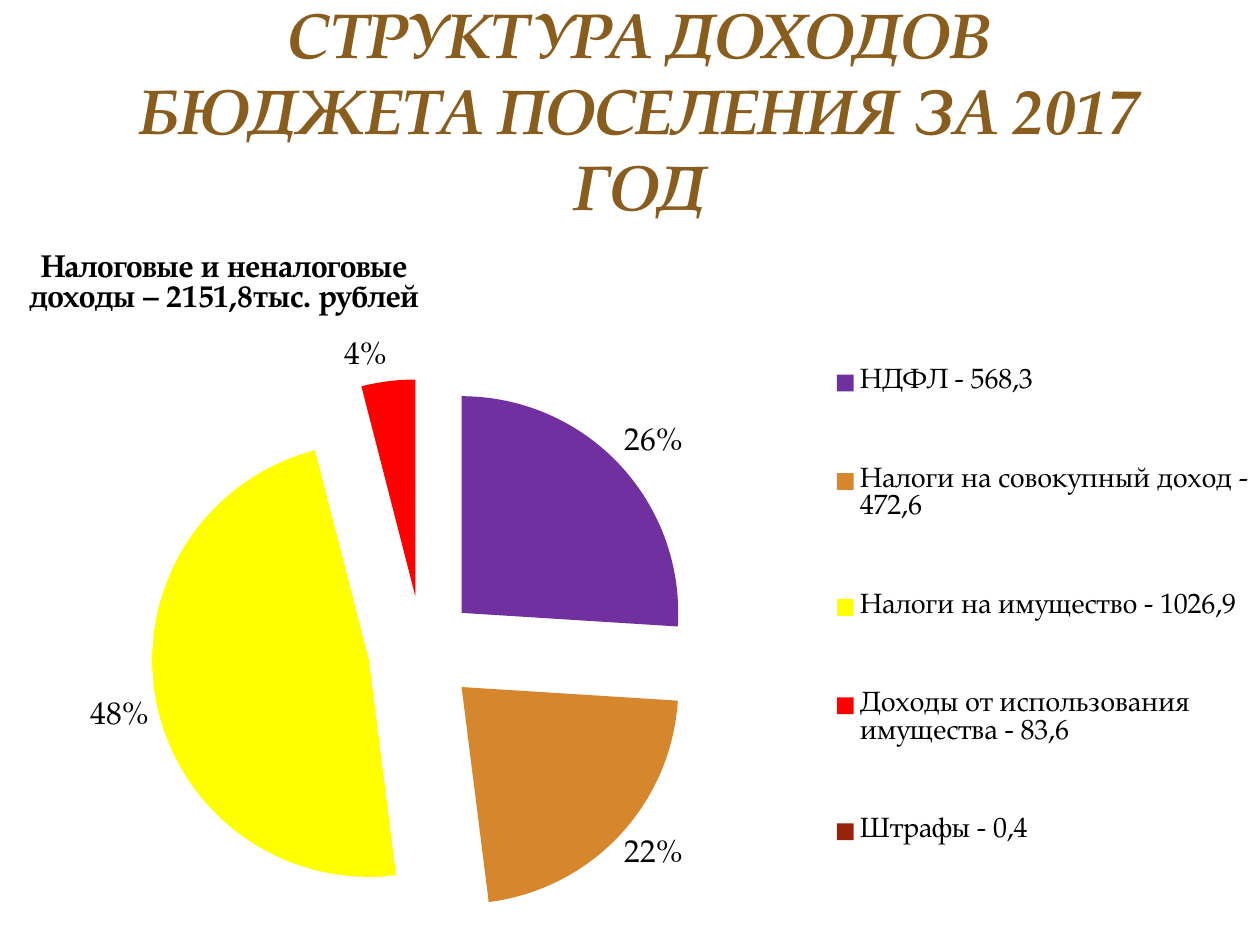
from pptx import Presentation
from pptx.chart.data import CategoryChartData
from pptx.dml.color import RGBColor
from pptx.enum.chart import XL_CHART_TYPE as ChartType, XL_LABEL_POSITION as LabelPosition
from pptx.enum.chart import XL_LEGEND_POSITION as LegendPosition
from pptx.enum.text import MSO_ANCHOR as Anchor, PP_ALIGN as Align
from pptx.oxml import parse_xml
from pptx.oxml.ns import nsdecls, qn
from pptx.util import Pt

HEADING = "СТРУКТУРА ДОХОДОВ БЮДЖЕТА ПОСЕЛЕНИЯ ЗА 2017 ГОД"
CHART_TITLE = ["Налоговые и неналоговые", "доходы – 2151,8тыс. рублей"]
INCOME = [
    ("НДФЛ - 568,3", 26, "7030A0"),
    ("Налоги на совокупный доход - 472,6", 22, "D6862D"),
    ("Налоги на имущество - 1026,9", 48, "FFFF00"),
    ("Доходы от использования имущества - 83,6", 4, "FF0000"),
    ("Штрафы - 0,4", 0, "972109"),
]
EXPLOSION = 25

FONT = "TeX Gyre Pagella"
THEME = {
    "heading": {"name": FONT, "size": Pt(36), "bold": True, "italic": True, "color": "895D1D"},
    "chart": {"name": FONT, "size": Pt(18), "color": "000000"},
    "title": {"name": FONT, "size": Pt(18), "bold": True, "color": "000000"},
    "legend": {"name": FONT, "size": Pt(16), "color": "000000"},
}
HEADING_BOX = (60, 21, 610, 83)
CHART_BOX = (0, 134, 720, 406)
TITLE_LAYOUT = {"x": 0.02, "y": 0.02}
PLOT_LAYOUT = {"x": 0.12, "y": 0.2, "w": 0.43, "h": 0.77}
LEGEND_LAYOUT = {"x": 0.66, "y": 0.09, "w": 0.34, "h": 0.87}


def style_font(font, style):
    for name, value in style.items():
        if name == "color":
            font.color.rgb = RGBColor.from_string(value)
        else:
            setattr(font, name, value)


def place(element, layout, index, inner=False):
    for old in element.findall(qn("c:layout")):
        element.remove(old)
    target = '<c:layoutTarget val="inner"/>' if inner else ""
    modes = "".join(f'<c:{key}Mode val="edge"/>' for key in "xy")
    values = "".join(f'<c:{key} val="{value}"/>' for key, value in layout.items())
    element.insert(index, parse_xml(
        f'<c:layout {nsdecls("c")}><c:manualLayout>{target}{modes}{values}'
        "</c:manualLayout></c:layout>"))


def add_heading(slide):
    frame = slide.shapes.add_textbox(*map(Pt, HEADING_BOX)).text_frame
    frame.word_wrap = True
    frame.vertical_anchor = Anchor.MIDDLE
    paragraph = frame.paragraphs[0]
    paragraph.alignment = Align.CENTER
    run = paragraph.add_run()
    run.text = HEADING
    style_font(run.font, THEME["heading"])


def add_title(chart):
    chart.has_title = True
    title = chart.chart_title
    title.include_in_layout = False
    frame = title.text_frame
    for index, line in enumerate(CHART_TITLE):
        paragraph = frame.add_paragraph() if index else frame.paragraphs[0]
        paragraph.alignment = Align.CENTER
        run = paragraph.add_run()
        run.text = line
        style_font(run.font, THEME["title"])
    place(title._element, TITLE_LAYOUT, 1)


def add_legend(chart):
    chart.has_legend = True
    legend = chart.legend
    legend.position = LegendPosition.RIGHT
    legend.include_in_layout = False
    style_font(legend.font, THEME["legend"])
    place(legend._element, LEGEND_LAYOUT, 1)


def add_income_chart(slide):
    data = CategoryChartData()
    data.categories = [name for name, _, _ in INCOME]
    data.add_series("Series 1", [value for _, value, _ in INCOME])
    chart = slide.shapes.add_chart(ChartType.PIE, *map(Pt, CHART_BOX), data).chart
    style_font(chart.font, THEME["chart"])
    add_title(chart)
    add_legend(chart)
    plot = chart.plots[0]
    plot.vary_by_categories = True
    series = plot.series[0]
    for index, (_, _, color) in enumerate(INCOME):
        fill = series.points[index].format.fill
        fill.solid()
        fill.fore_color.rgb = RGBColor.from_string(color)
    series._element.find(qn("c:dPt")).addprevious(
        parse_xml(f'<c:explosion {nsdecls("c")} val="{EXPLOSION}"/>'))
    labels = series.data_labels
    formats = {"show_percentage": True, "show_value": False, "number_format": "0%",
               "number_format_is_linked": False, "position": LabelPosition.OUTSIDE_END}
    for name, value in formats.items():
        setattr(labels, name, value)
    style_font(labels.font, THEME["chart"])
    place(chart._chartSpace.chart.plotArea, PLOT_LAYOUT, 0, inner=True)


def main():
    presentation = Presentation()
    presentation.slide_width, presentation.slide_height = Pt(720), Pt(540)
    slide = presentation.slides.add_slide(presentation.slide_layouts[6])
    add_heading(slide)
    add_income_chart(slide)
    presentation.save("out.pptx")


if __name__ == "__main__":
    main()
